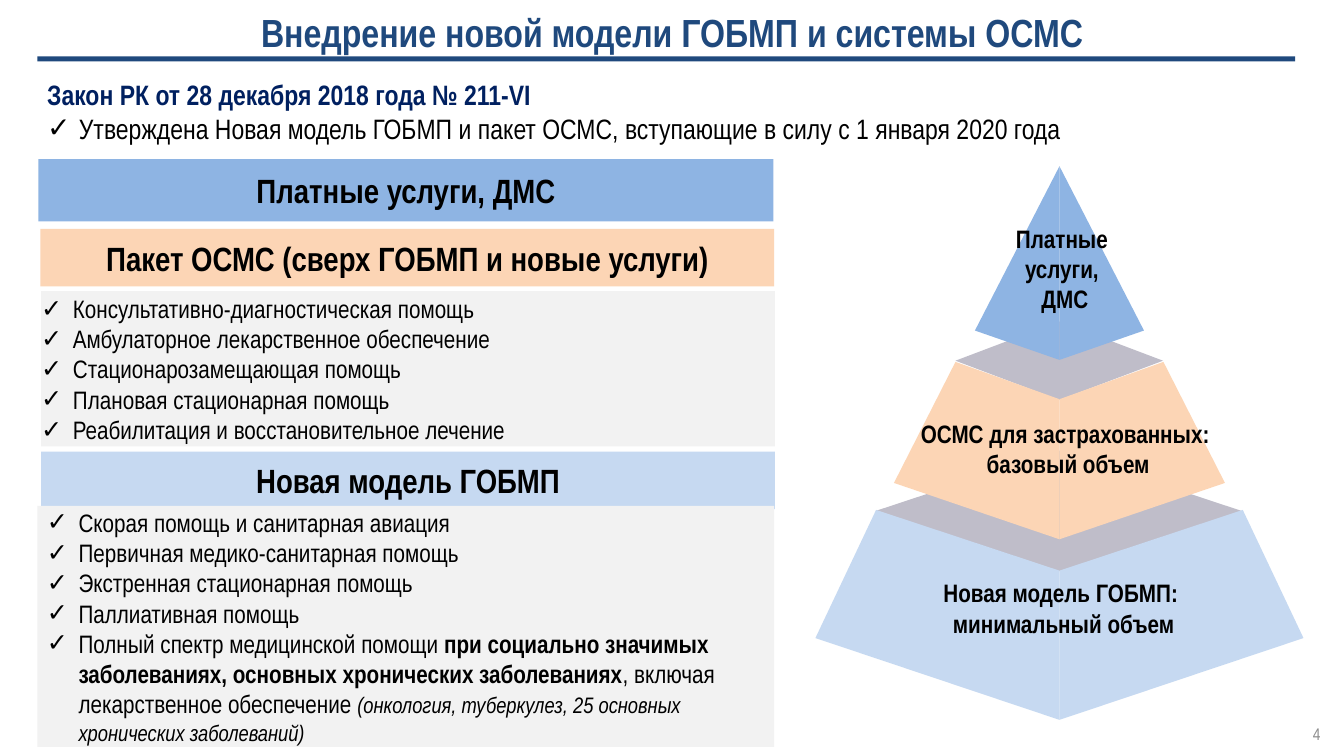
from lxml import etree
from pptx import Presentation
from pptx.dml.color import RGBColor
from pptx.enum.shapes import MSO_SHAPE as Preset
from pptx.enum.text import MSO_ANCHOR as Anchor, PP_ALIGN as Align
from pptx.oxml.ns import qn
from pptx.util import Cm, Pt

NAVY = RGBColor(0x1F, 0x49, 0x7D)
LAW_BLUE = RGBColor(0x00, 0x20, 0x60)
BLACK = RGBColor(0x00, 0x00, 0x00)
WHITE = RGBColor(0xFF, 0xFF, 0xFF)
PAGE_GREY = RGBColor(0x8C, 0x8C, 0x8C)
LIST_GREY = RGBColor(0xF2, 0xF2, 0xF2)
SHADE_GREY = RGBColor(0xBF, 0xBD, 0xC9)
PAID_BLUE = RGBColor(0x8E, 0xB4, 0xE3)
PACKAGE_PEACH = RGBColor(0xFC, 0xD5, 0xB5)
MODEL_BLUE = RGBColor(0xC6, 0xD9, 0xF1)

BOLD = {"bold": True}
HANGING = Cm(0.8)


def paint(shape, color):
    shape.shadow.inherit = False
    shape.fill.solid()
    shape.fill.fore_color.rgb = color
    shape.line.fill.background()
    return shape


def write(shape, paragraphs, size, color=BLACK, align=Align.LEFT, anchor=Anchor.TOP,
          insets=(0, 0, 0, 0), indent=None):
    """Fill a shape with paragraphs of (text, font settings) runs; indent adds check marks."""
    frame = shape.text_frame
    frame.word_wrap = True
    frame.vertical_anchor = anchor
    for side, inset in zip(("left", "top", "right", "bottom"), insets):
        setattr(frame, f"margin_{side}", Cm(inset))
    for index, runs in enumerate(paragraphs):
        paragraph = frame.paragraphs[0] if index == 0 else frame.add_paragraph()
        paragraph.alignment = align
        for text, settings in runs:
            run = paragraph.add_run()
            run.text = text
            font_format = {"name": "Arial Narrow", "size": Pt(size), **settings}
            for attribute, value in font_format.items():
                setattr(run.font, attribute, value)
            run.font.color.rgb = color
        if indent is not None and not (shape is law and index == 0):
            properties = paragraph._p.get_or_add_pPr()
            properties.set("marL", str(Cm(indent)))
            properties.set("indent", str(-HANGING))
            etree.SubElement(properties, qn("a:buFont")).set("typeface", "Arial")
            etree.SubElement(properties, qn("a:buChar")).set("char", "✓")


prs = Presentation()
prs.slide_width, prs.slide_height = Cm(33.87), Cm(19.05)
slide = prs.slides.add_slide(prs.slide_layouts[6])
shapes = slide.shapes
DEFAULT_INSETS = (0.25, 0.13, 0.25, 0.13)

# Heading, page number and the law
law = paint(shapes.add_shape(Preset.RECTANGLE, Cm(0.94), Cm(1.83), Cm(31.7), Cm(1.96)), WHITE)
write(law, [[("Закон РК от 28 декабря 2018 года № 211-VІ", BOLD)],
            [("Утверждена Новая модель ГОБМП и пакет ОСМС, вступающие в силу "
              "с 1 января 2020 года", {})]],
      20, insets=DEFAULT_INSETS, indent=0.8)
law.text_frame.paragraphs[0].runs[0].font.color.rgb = LAW_BLUE

title = shapes.add_textbox(0, Cm(0.2), prs.slide_width, Cm(1))
write(title, [[("Внедрение новой модели ГОБМП и системы ОСМС", BOLD)]], 28, NAVY, Align.CENTER)
title.text_frame.paragraphs[0].space_before = Pt(3)
title.text_frame.paragraphs[0].space_after = Pt(6)
paint(shapes.add_shape(Preset.RECTANGLE, Cm(0.94), Cm(1.42), Cm(31.7), Cm(0.13)), NAVY)

page_number = shapes.add_textbox(Cm(25.91), Cm(17.98), Cm(7.62), Cm(1.02))
write(page_number, [[("4", {})]], 12, PAGE_GREY, Align.RIGHT, Anchor.MIDDLE, DEFAULT_INSETS)

# Left column: headings and their lists of services
for heading, left, top, width, height, color in (
    ("Новая модель ГОБМП", 1.04, 11.38, 18.49, 1.45, MODEL_BLUE),
    ("Пакет ОСМС (сверх ГОБМП и новые услуги)", 1.02, 5.77, 18.49, 1.45, PACKAGE_PEACH),
    ("Платные услуги, ДМС", 0.97, 4.01, 18.52, 1.57, PAID_BLUE),
):
    band = shapes.add_shape(Preset.RECTANGLE, Cm(left), Cm(top), Cm(width), Cm(height))
    write(paint(band, color), [[(heading, BOLD)]], 24, align=Align.CENTER, anchor=Anchor.MIDDLE)

package_services = [[(service, {})] for service in (
    "Консультативно-диагностическая помощь",
    "Амбулаторное лекарственное обеспечение",
    "Стационарозамещающая помощь",
    "Плановая стационарная помощь",
    "Реабилитация и восстановительное лечение",
)]
model_services = [[(service, {})] for service in (
    "Скорая помощь и санитарная авиация",
    "Первичная медико-санитарная помощь",
    "Экстренная стационарная помощь",
    "Паллиативная помощь",
)]
model_services.append([
    ("Полный спектр медицинской помощи ", {}),
    ("при социально значимых заболеваниях, основных хронических заболеваниях", BOLD),
    (", включая лекарственное обеспечение ", {}),
    ("(онкология, туберкулез, 25 основных хронических заболеваний)",
     {"size": Pt(16), "italic": True}),
])
for services, left, top, width, height, anchor, top_inset, indent in (
    (package_services, 1.04, 7.34, 18.49, 3.91, Anchor.TOP, 0.05, 0.8),
    (model_services, 0.94, 12.75, 18.57, 6.07, Anchor.MIDDLE, 0, 1.04),
):
    panel = shapes.add_shape(Preset.RECTANGLE, Cm(left), Cm(top), Cm(width), Cm(height))
    write(paint(panel, LIST_GREY), services, 18, anchor=anchor,
          insets=(0, top_inset, 0, 0), indent=indent)

# Pyramid: shades, then mirrored halves as (distance from axis, height on slide)
AXIS = 26.7
for left, top, width, height in ((24.08, 8.1, 5.23, 1.98), (22.07, 11.35, 9.22, 3.05)):
    shade = shapes.add_shape(Preset.FLOWCHART_DECISION, Cm(left), Cm(top), Cm(width), Cm(height))
    paint(shade, SHADE_GREY)

for color, half in (
    (MODEL_BLUE, ((6.15, 16.08), (4.62, 12.85), (0, 14.38), (0, 18.14))),
    (PACKAGE_PEACH, ((4.17, 12.17), (2.62, 9.12), (0, 10.06), (0, 13.59))),
    (PAID_BLUE, ((0, 9.07), (0, 4.19), (2.13, 8.33))),
):
    for side in (1, -1):
        corners = [(Cm(AXIS + side * x), Cm(y)) for x, y in half]
        outline = shapes.build_freeform(*corners[0])
        outline.add_line_segments(corners[1:], close=True)
        paint(outline.convert_to_shape(), color)

for lines, left, top, width, height in (
    (("Платные ", "услуги, ", "ДМС"), 20.8, 5.49, 12.07, 2.57),
    (("ОСМС для застрахованных: ", "базовый объем"), 22.02, 10.41, 9.8, 1.8),
    (("Новая модель ГОБМП: ", "минимальный объем"), 21.79, 14.43, 10.03, 1.8),
):
    label = shapes.add_textbox(Cm(left), Cm(top), Cm(width), Cm(height))
    write(label, [[(line, BOLD)] for line in lines], 18, align=Align.CENTER,
          insets=DEFAULT_INSETS)

prs.save("out.pptx")
